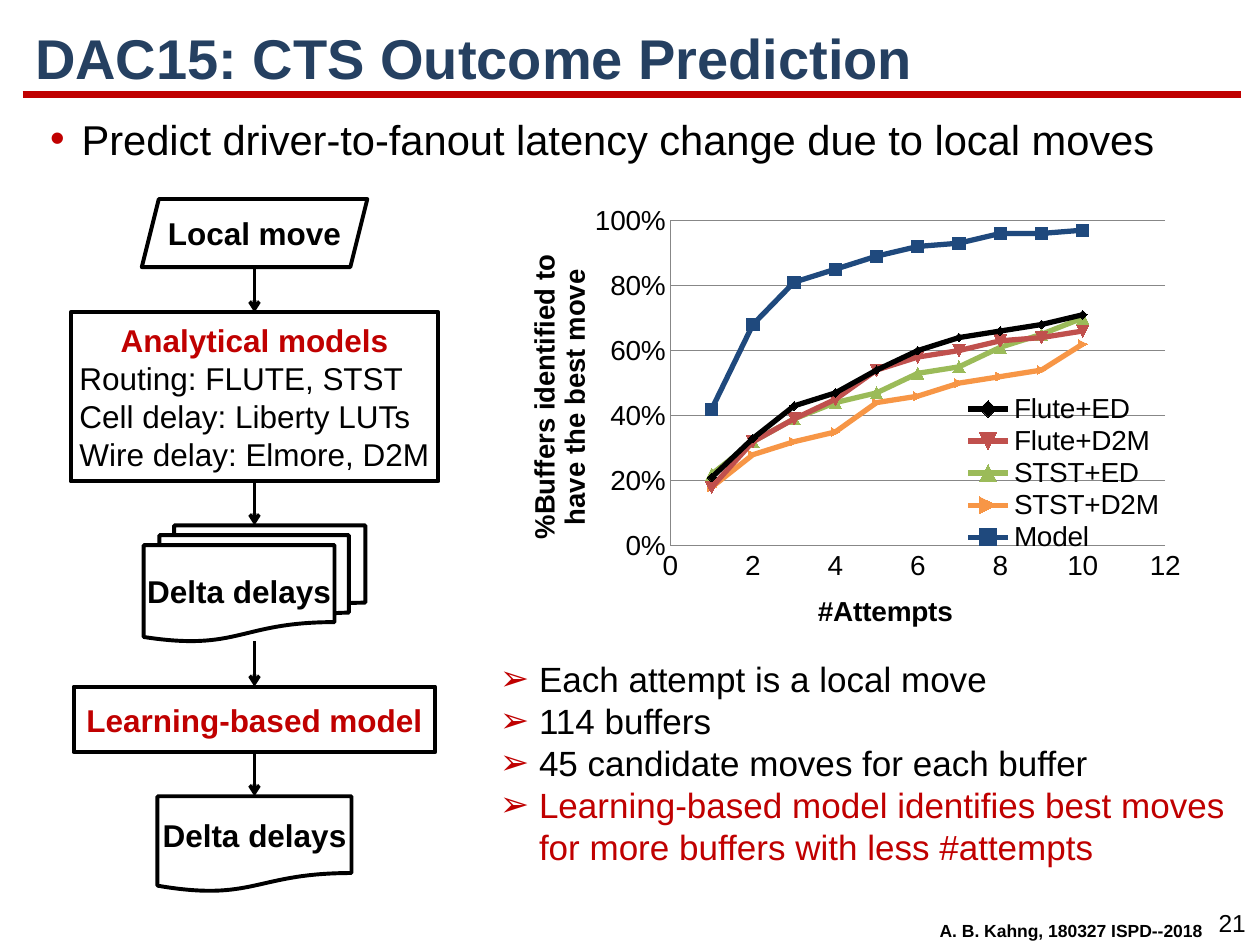
import pptx
import pptx.util
import pptx.chart.data
import pptx.dml.color
import pptx.enum.chart
import pptx.enum.shapes
import pptx.enum.text
import pptx.oxml
import pptx.oxml.ns
import lxml.etree

RGB = pptx.dml.color.RGBColor
BLACK = RGB(0, 0, 0)
RED = RGB(0xC0, 0, 0)
NAVY = RGB(0x25, 0x40, 0x61)
GREY = RGB(0x87, 0x87, 0x87)
ROSE = RGB(0xC0, 0x50, 0x4D)
GREEN = RGB(0x9B, 0xBB, 0x59)
AMBER = RGB(0xF7, 0x96, 0x46)
BLUE = RGB(0x1F, 0x49, 0x7D)
Pt = pptx.util.Pt
Align = pptx.enum.text.PP_ALIGN
Anchor = pptx.enum.text.MSO_ANCHOR
Kind = pptx.enum.shapes.MSO_SHAPE
qn = pptx.oxml.ns.qn

deck = pptx.Presentation()
deck.slide_width = pptx.util.Inches(10)
deck.slide_height = pptx.util.Inches(7.5)
CELL = deck.slide_width / 100
slide = deck.slides.add_slide(deck.slide_layouts[6])
shapes = slide.shapes


def grid(*cells):
    return [round(c * CELL) for c in cells]


def write(shape, *lines, size=18, color=BLACK, bold=False, align=Align.LEFT,
          anchor=Anchor.TOP, wrap=True, side=1, lead=None, bullet=None, hang=0,
          rest=None):
    frame = shape.text_frame
    frame.word_wrap = wrap
    frame.vertical_anchor = anchor
    frame.margin_left, frame.margin_right = grid(side, side)
    frame.margin_top, frame.margin_bottom = grid(0.5, 0.5)
    for n, line in enumerate(lines):
        para = frame.paragraphs[0] if n == 0 else frame.add_paragraph()
        para.alignment = align
        if lead:
            para.line_spacing = lead
        props = para._p.get_or_add_pPr()
        if bullet:
            props.set("marL", str(grid(hang)[0]))
            props.set("indent", str(-grid(hang)[0]))
            tint = lxml.etree.SubElement(props, qn("a:buClr"))
            lxml.etree.SubElement(tint, qn("a:srgbClr"), val=str(RED))
            lxml.etree.SubElement(props, qn("a:buFont"), typeface="Arial")
            lxml.etree.SubElement(props, qn("a:buChar"), char=bullet)
        run = para.add_run()
        run.text = line
        font = run.font
        font.name, font.size, font.bold = "Arial", Pt(size), bold
        font.color.rgb = color
        if rest and n:
            para.alignment = Align.LEFT
            props.set("marL", str(grid(0.7)[0]))
            font.bold, font.color.rgb = False, rest


write(shapes.add_textbox(*grid(1.8, 1.6, 96, 6.5)), "DAC15: CTS Outcome Prediction",
      size=32, color=NAVY, bold=True, anchor=Anchor.MIDDLE, lead=0.9)
write(shapes.add_textbox(*grid(3, 9.5, 93.7, 6)),
      "Predict driver-to-fanout latency change due to local moves",
      size=23.8, lead=0.75, bullet="•", hang=2.5)
write(shapes.add_textbox(*grid(95.6, 71.6, 4.4, 3.4)), "21",
      size=14, align=Align.CENTER, wrap=False)
write(shapes.add_textbox(*grid(73.5, 72.5, 23, 2.7)), "A. B. Kahng, 180327 ISPD--2018",
      size=10, bold=True, align=Align.CENTER, wrap=False)

MID = 20.2
steps = [
    (Kind.PARALLELOGRAM, 15.8, 17.9, 5.4, BLACK, ["Local move"]),
    (Kind.RECTANGLE, 24.8, 29.2, 13.4, RED,
     ["Analytical models", "Routing: FLUTE, STST", "Cell delay: Liberty LUTs",
      "Wire delay: Elmore, D2M"]),
    (Kind.FLOWCHART_MULTIDOCUMENT, 41.7, 17.6, 9.2, BLACK, ["Delta delays"]),
    (Kind.RECTANGLE, 54.5, 28.7, 5.2, RED, ["Learning-based model"]),
    (Kind.FLOWCHART_DOCUMENT, 63.2, 15.4, 7.6, BLACK, ["Delta delays"]),
]
boxes = []
for kind, top, wide, high, color, lines in steps:
    box = shapes.add_shape(kind, *grid(MID - wide / 2, top, wide, high))
    box.shadow.inherit = False
    box.fill.background()
    box.line.color.rgb = BLACK
    box.line.width = Pt(2.25)
    write(box, *lines, color=color, bold=True, align=Align.CENTER,
          anchor=Anchor.MIDDLE, side=0, rest=BLACK)
    boxes.append(box)

links = [(MID, a[1] + a[3], MID, b[1], BLACK, 2) for a, b in zip(steps, steps[1:])]
links.append((1.8, 7.5, 98.5, 7.5, RED, 4.5))
for n, (*ends, color, width) in enumerate(links):
    link = shapes.add_connector(pptx.enum.shapes.MSO_CONNECTOR.STRAIGHT, *grid(*ends))
    link.line.color.rgb = color
    link.line.width = Pt(width)
    props = link._element.spPr
    if n < len(steps) - 1:
        lxml.etree.SubElement(link.line._get_or_add_ln(), qn("a:tailEnd"), type="arrow")
        if steps[n][0] == Kind.RECTANGLE:
            link.begin_connect(boxes[n], 2)
        if steps[n + 1][0] == Kind.RECTANGLE:
            link.end_connect(boxes[n + 1], 0)
    lxml.etree.SubElement(props, qn("a:effectLst"))

Mark = pptx.enum.chart.XL_MARKER_STYLE
rows = [
    ("Flute+ED", BLACK, 5, [21, 33, 43, 47, 54, 60, 64, 66, 68, 71]),
    ("Flute+D2M", ROSE, 7, [18, 32, 39, 45, 54, 58, 60, 63, 64, 66]),
    ("STST+ED", GREEN, 7, [22, 32, 39, 44, 47, 53, 55, 61, 65, 70]),
    ("STST+D2M", AMBER, 5, [18, 28, 32, 35, 44, 46, 50, 52, 54, 62]),
    ("Model", BLUE, 7, [42, 68, 81, 85, 89, 92, 93, 96, 96, 97]),
]
data = pptx.chart.data.XyChartData(number_format="0%")
for name, color, size, marks in rows:
    curve = data.add_series(name)
    for x, mark in enumerate(marks, 1):
        curve.add_data_point(x, mark / 100)
chart = shapes.add_chart(pptx.enum.chart.XL_CHART_TYPE.XY_SCATTER_SMOOTH,
                         *grid(40.3, 15.8, 53.8, 34.6), data).chart
chart.has_title = False
chart.font.name, chart.font.size = "Arial", Pt(16)
chart.font.color.rgb = BLACK
chart.plots[0].vary_by_categories = False
for n, (curve, row) in enumerate(zip(chart.plots[0].series, rows)):
    name, color, size, marks = row
    curve._element.find(qn("c:idx")).set("val", str((n + 1) % len(rows)))
    curve.smooth = True
    curve.format.line.color.rgb = color
    curve.format.line.width = Pt(3)
    curve.marker.style = Mark.SQUARE if name == "Model" else Mark.AUTOMATIC
    curve.marker.size = size
    curve.marker.format.fill.solid()
    curve.marker.format.fill.fore_color.rgb = color
    curve.marker.format.line.color.rgb = color

axes = [
    (chart.category_axis, "#Attempts", 12, 2, "General"),
    (chart.value_axis, "%Buffers identified to have the best move", 1, 0.2, "0%"),
]
for axis, title, top, step, form in axes:
    axis.minimum_scale, axis.maximum_scale, axis.major_unit = 0, top, step
    axis.major_tick_mark = axis.minor_tick_mark = pptx.enum.chart.XL_TICK_MARK.NONE
    axis.tick_labels.number_format = form
    axis.tick_labels.number_format_is_linked = False
    axis.format.line.color.rgb = GREY
    axis.has_major_gridlines = form == "0%"
    axis.axis_title.text_frame.text = title
    font = axis.axis_title.text_frame.paragraphs[0].runs[0].font
    font.name, font.size, font.bold = "Arial", Pt(16), True
    font.color.rgb = BLACK
chart.value_axis.major_gridlines.format.line.color.rgb = GREY
chart.has_legend = True
chart.legend.position = pptx.enum.chart.XL_LEGEND_POSITION.RIGHT
chart.legend.include_in_layout = False

spots = [
    (chart._chartSpace.xpath("//c:plotArea")[0], 0, (0.24, 0.05, 0.73, 0.76)),
    (chart.legend._element, 1, (0.67, 0.45, 0.3, 0.38)),
    (chart.category_axis.axis_title._element, 1, (0.45, 0.91)),
    (chart.value_axis.axis_title._element, 1, (0.02, 0.13)),
]
for owner, place, shares in spots:
    for old in owner.findall(qn("c:layout")):
        owner.remove(old)
    layout = pptx.oxml.parse_xml("<c:layout %s/>" % pptx.oxml.ns.nsdecls("c"))
    owner.insert(place, layout)
    manual = lxml.etree.SubElement(layout, qn("c:manualLayout"))
    if place == 0:
        lxml.etree.SubElement(manual, qn("c:layoutTarget"), val="inner")
    for key in "xy":
        lxml.etree.SubElement(manual, qn("c:%sMode" % key), val="edge")
    for key, share in zip("xywh", shares):
        lxml.etree.SubElement(manual, qn("c:" + key), val=str(share))

notes = shapes.add_textbox(*grid(38.7, 51.7, 60.3, 17.9))
write(notes, "Each attempt is a local move", "114 buffers",
      "45 candidate moves for each buffer",
      "Learning-based model identifies best moves for more buffers with less #attempts",
      size=20, bullet="➢", hang=3.1)
notes.text_frame.paragraphs[-1].runs[0].font.color.rgb = RED

deck.save("out.pptx")
